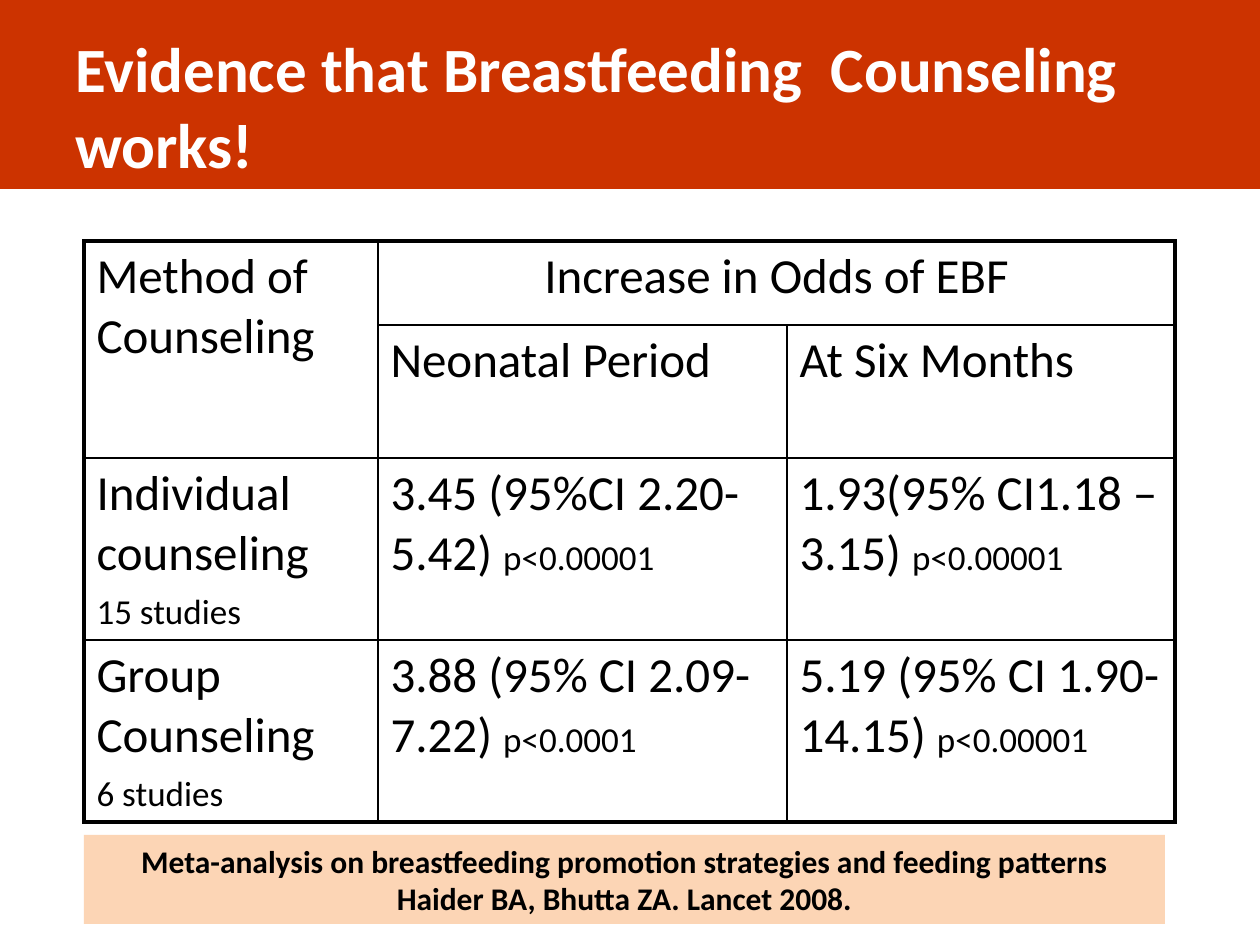
from pptx import Presentation
from pptx.dml.color import RGBColor
from pptx.enum.shapes import MSO_SHAPE
from pptx.enum.text import MSO_ANCHOR, PP_ALIGN
from pptx.oxml.ns import qn
from pptx.util import Emu, Pt
from lxml import etree

PX = 914400 // 126
RECT = MSO_SHAPE.RECTANGLE
MIDDLE, TOP = MSO_ANCHOR.MIDDLE, MSO_ANCHOR.TOP
LEFT, CENTER = PP_ALIGN.LEFT, PP_ALIGN.CENTER
COLORS = {"band": "CC3300", "title": "FFFFFF", "text": "000000",
          "line": "000000", "source": "FCD5B5"}


def write(tf, paragraphs, color="text", bold=False, align=LEFT, anchor=TOP):
    """Each paragraph is a list of (text, size) runs."""
    tf.word_wrap = True
    tf.vertical_anchor = anchor
    for i, runs in enumerate(paragraphs):
        p = tf.add_paragraph() if i else tf.paragraphs[0]
        p.alignment = align
        if i:
            p.space_before = Pt(4)
        for text, size in runs:
            r = p.add_run()
            r.text = text
            r.font.name = "Calibri"
            r.font.size = Pt(size)
            r.font.bold = bold
            r.font.color.rgb = RGBColor.from_string(COLORS[color])


def add_block(x, y, w, h, fill):
    sp = s.shapes.add_shape(RECT, *(Emu(v * PX) for v in (x, y, w, h)))
    sp.shadow.inherit = False
    sp.fill.solid()
    sp.fill.fore_color.rgb = RGBColor.from_string(COLORS[fill])
    sp.line.fill.background()
    return sp


prs = Presentation()
prs.slide_width, prs.slide_height = Emu(1260 * PX), Emu(945 * PX)
s = prs.slides.add_slide(prs.slide_layouts[6])

# Title band
add_block(0, 0, 1260, 189, "band")
title = s.shapes.add_textbox(*(Emu(v * PX) for v in (63, 26, 1134, 158)))
write(title.text_frame, [[("Evidence that Breastfeeding  Counseling works!", 36)]],
      color="title", bold=True, anchor=MIDDLE)

# Table of odds by counseling method
widths = [294, 409, 388]
heights = [84, 133, 182, 182]
rows, cols = len(heights), len(widths)
table = s.shapes.add_table(rows, cols, Emu(84 * PX), Emu(241 * PX),
                           Emu(sum(widths) * PX), Emu(sum(heights) * PX)).table
table.first_row = table.horz_banding = False
for column, w in zip(table.columns, widths):
    column.width = Emu(w * PX)
for row, h in zip(table.rows, heights):
    row.height = Emu(h * PX)
table.cell(0, 0).merge(table.cell(1, 0))
table.cell(0, 1).merge(table.cell(0, 2))

BIG, SMALL = 28, 20
contents = {
    (0, 0): [[("Method of Counseling", BIG)]],
    (0, 1): [[("Increase in Odds of EBF", BIG)]],
    (1, 1): [[("Neonatal Period", BIG)]],
    (1, 2): [[("At Six Months", BIG)]],
    (2, 0): [[("Individual counseling", BIG)], [("15 studies", SMALL)]],
    (2, 1): [[("3.45 (95%CI 2.20-5.42) ", BIG), ("p<0.00001", SMALL)]],
    (2, 2): [[("1.93(95% CI1.18 – 3.15) ", BIG), ("p<0.00001", SMALL)]],
    (3, 0): [[("Group Counseling", BIG)], [("6 studies", SMALL)]],
    (3, 1): [[("3.88 (95% CI 2.09-7.22) ", BIG), ("p<0.0001", SMALL)]],
    (3, 2): [[("5.19 (95% CI 1.90-14.15) ", BIG), ("p<0.00001", SMALL)]],
}
for (i, j), paragraphs in contents.items():
    write(table.cell(i, j).text_frame, paragraphs,
          align=CENTER if (i, j) == (0, 1) else LEFT)

# Heavy outer frame, thin inner rules
for i in range(rows):
    for j in range(cols):
        cell = table.cell(i, j)
        outer = {"a:lnL": j == 0, "a:lnR": j + cell.span_width == cols,
                 "a:lnT": i == 0, "a:lnB": i + cell.span_height == rows}
        tcPr = cell._tc.get_or_add_tcPr()
        for tag, heavy in outer.items():
            ln = etree.SubElement(tcPr, qn(tag), w=str(Pt(2.25 if heavy else 1)))
            fill = etree.SubElement(ln, qn("a:solidFill"))
            etree.SubElement(fill, qn("a:srgbClr"), val=COLORS["line"])
        cell.fill.background()

# Source of the figures
source = add_block(84, 835, 1081, 89, "source")
write(source.text_frame,
      [[("Meta-analysis on breastfeeding promotion strategies and feeding patterns "
         "Haider BA, Bhutta ZA. Lancet 2008.", 18)]],
      bold=True, align=CENTER, anchor=MIDDLE)

prs.save("out.pptx")
